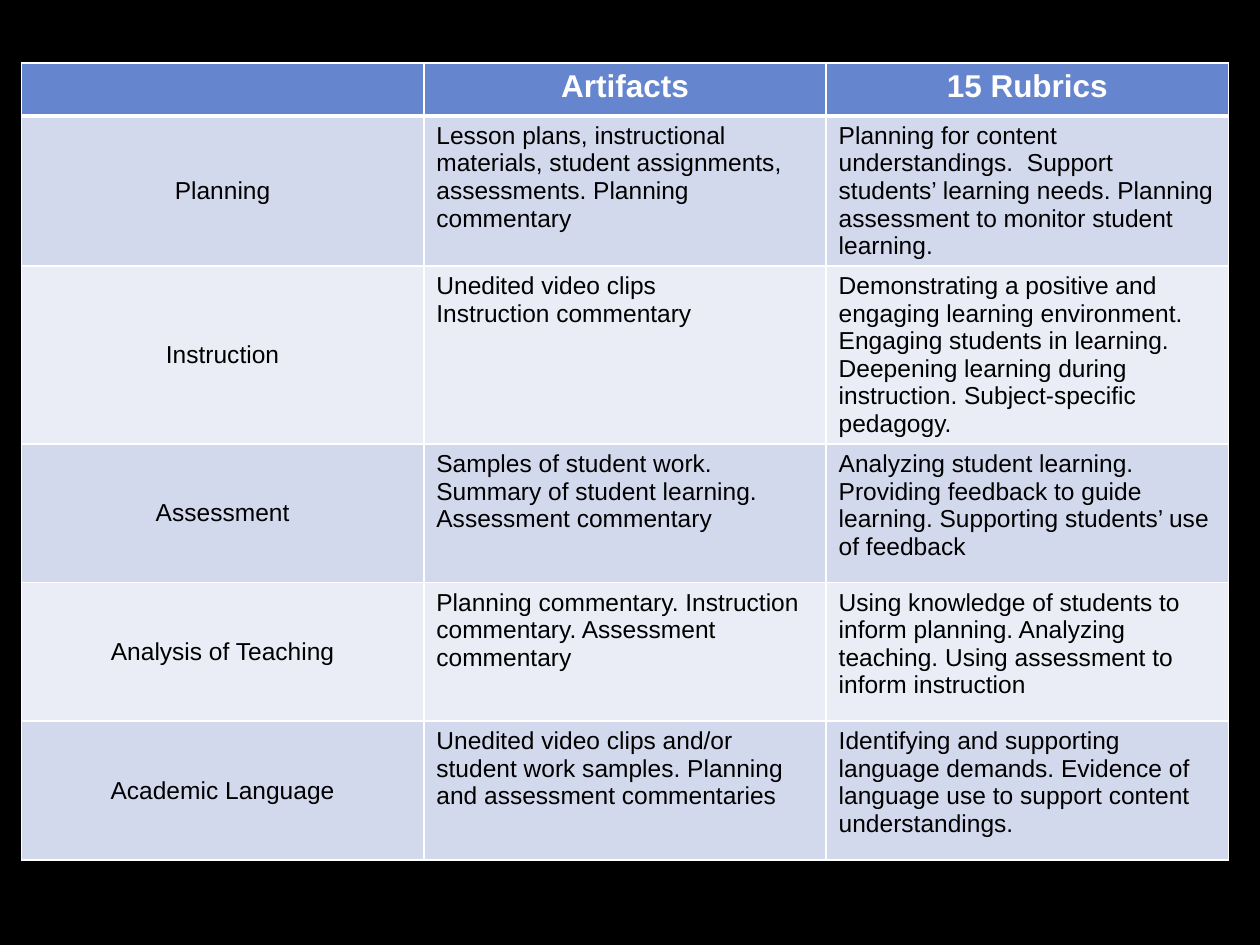
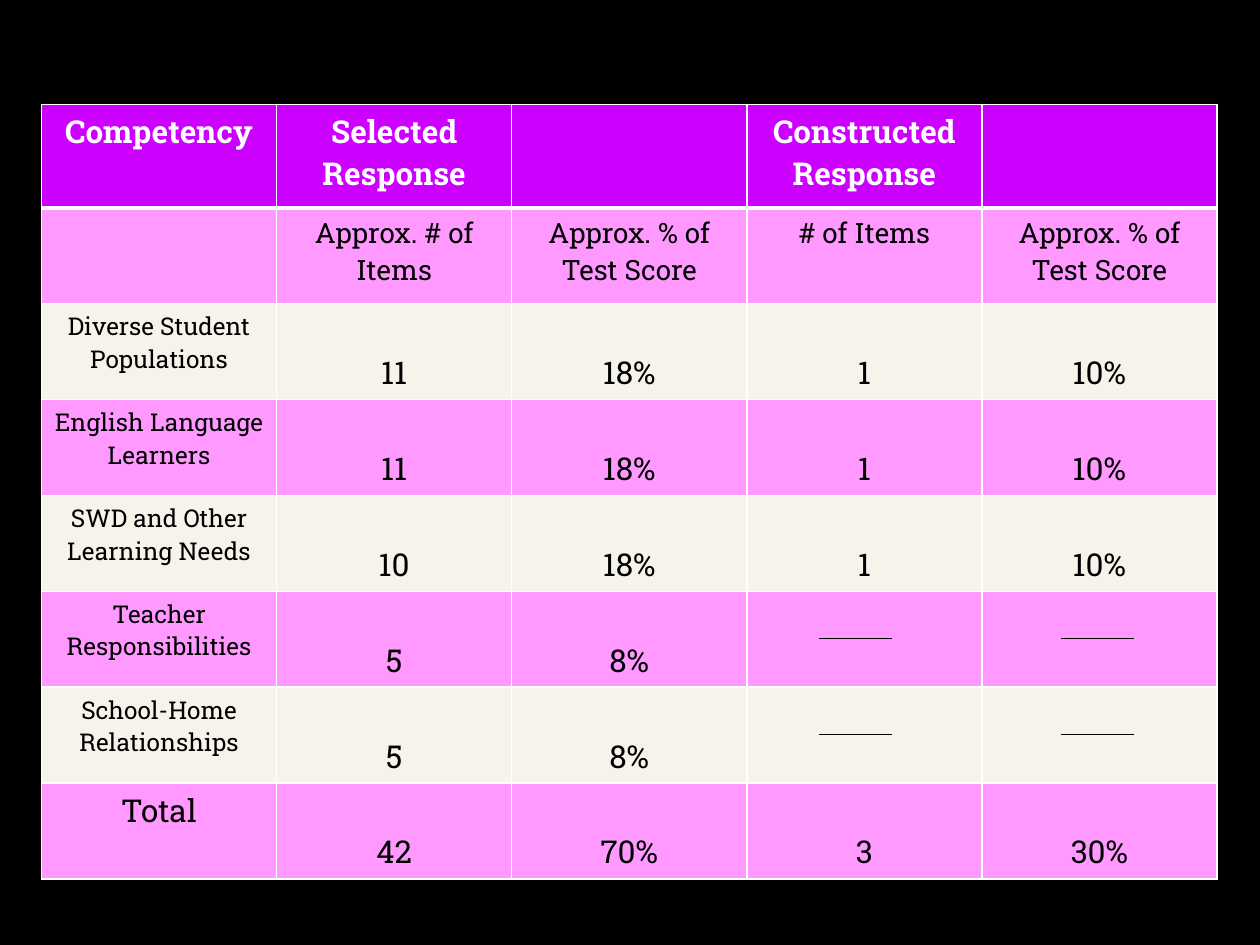
from collections import namedtuple

from lxml import etree
from pptx import Presentation
from pptx.dml.color import RGBColor
from pptx.enum.shapes import MSO_CONNECTOR
from pptx.enum.text import MSO_ANCHOR, PP_ALIGN
from pptx.oxml.ns import qn
from pptx.util import Inches, Pt

STRAIGHT = MSO_CONNECTOR.STRAIGHT
CENTER, LEFT = PP_ALIGN.CENTER, PP_ALIGN.LEFT
TOP, MIDDLE = MSO_ANCHOR.TOP, MSO_ANCHOR.MIDDLE

COLORS = {
    "background": "000000",
    "rule": "FFFFFF",
    "header_text": "FFFFFF",
    "body_text": "000000",
    "blue_header": "6585CF",
    "blue_odd": "D3D9ED",
    "blue_even": "EAEDF6",
    "violet_header": "CC00FF",
    "pink": "FF99FF",
    "cream": "F6F3EA",
}

Box = namedtuple("Box", "left top width")
CellStyle = namedtuple("CellStyle", "size align anchor spacing", defaults=[CENTER, TOP, None])
TableTheme = namedtuple("TableTheme", "font header bands")

BLUE = TableTheme("Arial", "blue_header", ["blue_odd", "blue_even"])
VIOLET = TableTheme("Roboto Slab", "violet_header", ["pink", "cream"])

HEADER_STYLE = CellStyle(18)

RUBRIC_ROWS = [
    ["", "Artifacts", "15 Rubrics"],
    ["Planning",
     "Lesson plans, instructional materials, student assignments, assessments. "
     "Planning commentary",
     "Planning for content understandings.  Support students’ learning needs. "
     "Planning assessment to monitor student learning."],
    ["Instruction",
     "Unedited video clips\nInstruction commentary",
     "Demonstrating a positive and engaging learning environment. Engaging students "
     "in learning. Deepening learning during instruction. Subject-specific pedagogy."],
    ["Assessment",
     "Samples of student work. Summary of student learning. Assessment commentary",
     "Analyzing student learning. Providing feedback to guide learning. "
     "Supporting students’ use of feedback"],
    ["Analysis of Teaching",
     "Planning commentary. Instruction commentary. Assessment commentary",
     "Using knowledge of students to inform planning. Analyzing teaching. "
     "Using assessment to inform instruction"],
    ["Academic Language",
     "Unedited video clips and/or student work samples. Planning and assessment "
     "commentaries",
     "Identifying and supporting language demands. Evidence of language use to "
     "support content understandings."],
]

COMPETENCY_ROWS = [
    ["Competency", "Selected Response", "", "Constructed Response", ""],
    ["", "Approx. # of Items", "Approx. % of Test Score", "# of Items",
     "Approx. % of Test Score"],
    ["Diverse Student Populations", "11", "18%", "1", "10%"],
    ["English Language Learners", "11", "18%", "1", "10%"],
    ["SWD and Other Learning Needs", "10", "18%", "1", "10%"],
    ["Teacher Responsibilities", "5", "8%", "", ""],
    ["School-Home Relationships", "5", "8%", "", ""],
    ["Total", "42", "70%", "3", "30%"],
]


def color(name):
    return RGBColor.from_string(COLORS[name])


def add_black_slide(presentation):
    slide = presentation.slides.add_slide(presentation.slide_layouts[6])
    slide.background.fill.solid()
    slide.background.fill.fore_color.rgb = color("background")
    return slide


def set_borders(cell, top, bottom):
    """Rule all four sides; top and bottom are widths in points."""
    properties = cell._tc.get_or_add_tcPr()
    for side, width in (("lnL", 1), ("lnR", 1), ("lnT", top), ("lnB", bottom)):
        line = etree.SubElement(properties, qn(f"a:{side}"), w=str(Pt(width)))
        fill = etree.SubElement(line, qn("a:solidFill"))
        etree.SubElement(fill, qn("a:srgbClr"), val=COLORS["rule"])


def write_cell(cell, text, style, font_name, text_color, bold):
    cell.text_frame.text = text
    cell.vertical_anchor = style.anchor
    for paragraph in cell.text_frame.paragraphs:
        paragraph.alignment = style.align
        if style.spacing:
            paragraph.line_spacing = style.spacing
        for run in paragraph.runs:
            run.font.name = font_name
            run.font.size = Pt(style.size)
            run.font.bold = bold
            run.font.color.rgb = color(text_color)


def add_ruled_table(slide, box, rows, header_height, row_height, theme, body_style):
    """Add a banded table; body_style(row, column) gives the style of a body cell."""
    column_count = len(rows[0])
    height = header_height + row_height * (len(rows) - 1)
    table = slide.shapes.add_table(
        len(rows), column_count, Inches(box.left), Inches(box.top),
        Inches(box.width), Inches(height)).table
    for column in table.columns:
        column.width = Inches(box.width / column_count)
    for row_index, texts in enumerate(rows):
        is_header = row_index == 0
        table.rows[row_index].height = Inches(header_height if is_header else row_height)
        band = theme.header if is_header else theme.bands[(row_index - 1) % 2]
        text_color = "header_text" if is_header else "body_text"
        for column_index, text in enumerate(texts):
            cell = table.cell(row_index, column_index)
            style = HEADER_STYLE if is_header else body_style(row_index, column_index)
            set_borders(cell, top=3 if row_index == 1 else 1, bottom=3 if is_header else 1)
            cell.fill.solid()
            cell.fill.fore_color.rgb = color(band)
            write_cell(cell, text, style, theme.font, text_color, is_header)


def rubric_style(row, column):
    return CellStyle(14, CENTER, MIDDLE) if column == 0 else CellStyle(14, LEFT)


def competency_style(row, column):
    if row == 1:
        return CellStyle(16)
    if column == 0:
        return CellStyle(18 if row == len(COMPETENCY_ROWS) - 1 else 14)
    return CellStyle(18, spacing=2.0)


def add_dash(slide, left, y, length):
    dash = slide.shapes.add_connector(
        STRAIGHT, Inches(left), Inches(y), Inches(left + length), Inches(y))
    dash.line.color.rgb = color("body_text")
    dash.line.width = Pt(0.75)
    etree.SubElement(dash._element.spPr, qn("a:effectLst"))


def build_rubric_slide(presentation, box):
    slide = add_black_slide(presentation)
    add_ruled_table(slide, box, RUBRIC_ROWS, 0.42, 1.1, BLUE, rubric_style)


def build_competency_slide(presentation, box):
    slide = add_black_slide(presentation)
    header_height, row_height = 0.82, 0.76
    add_ruled_table(slide, box, COMPETENCY_ROWS, header_height, row_height,
                    VIOLET, competency_style)
    for row_index, texts in enumerate(COMPETENCY_ROWS):
        if row_index > 1 and not texts[-1]:
            row_middle = box.top + header_height + row_height * (row_index - 0.5)
            for offset in (6.17, 8.09):
                add_dash(slide, box.left + offset, row_middle, 0.58)


def main():
    presentation = Presentation()
    presentation.slide_width = Inches(10)
    presentation.slide_height = Inches(7.5)
    build_rubric_slide(presentation, Box(0.17, 0.5, 9.58))
    build_competency_slide(presentation, Box(0.33, 0.83, 9.33))
    presentation.save("out.pptx")


if __name__ == "__main__":
    main()
